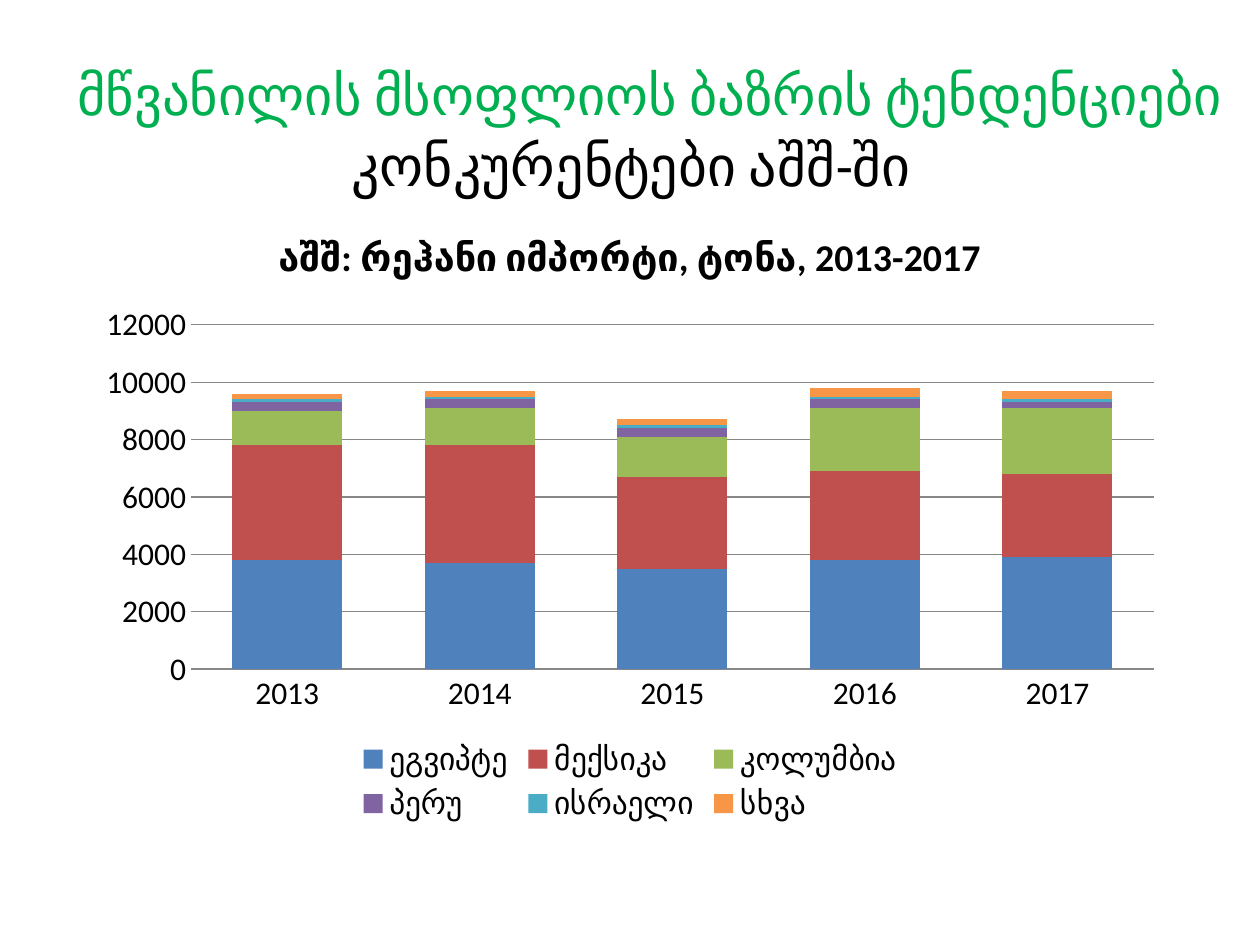
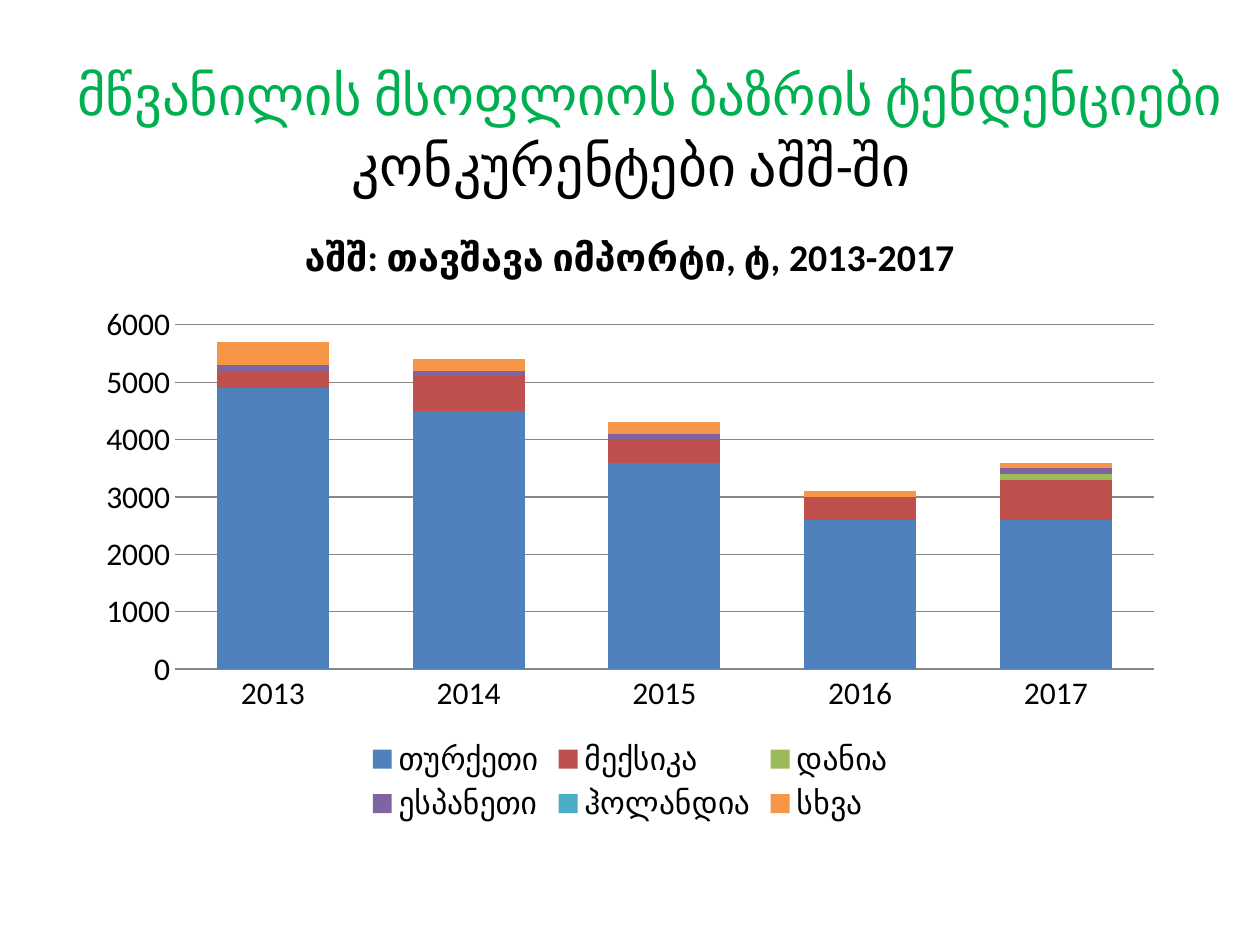
from pptx import Presentation, util as u
from pptx.chart.data import CategoryChartData
from pptx.dml.color import RGBColor
from pptx.enum import chart as charts, text

SCALE = 9144
FONT = "Calibri"
COLORS = {
    "black": "000000", "green": "00B050", "grid": "878787",
    "blue": "4F81BD", "red": "C0504D", "lime": "9BBB59",
    "purple": "8064A2", "aqua": "4BACC6", "orange": "F79646",
}
SERIES_COLORS = ("blue", "red", "lime", "purple", "aqua", "orange")
YEARS = ("2013", "2014", "2015", "2016", "2017")
TITLE = "მწვანილის მსოფლიოს ბაზრის ტენდენციები"
SUBTITLE = "კონკურენტები აშშ-ში"

BASIL = {
    "ეგვიპტე": (3800, 3700, 3500, 3800, 3900),
    "მექსიკა": (4000, 4100, 3200, 3100, 2900),
    "კოლუმბია": (1200, 1300, 1400, 2200, 2300),
    "პერუ": (300, 300, 300, 300, 200),
    "ისრაელი": (100, 100, 100, 100, 100),
    "სხვა": (200, 200, 200, 300, 300),
}
TARRAGON = {
    "თურქეთი": (4900, 4500, 3600, 2600, 2600),
    "მექსიკა": (300, 600, 400, 400, 700),
    "დანია": (0, 0, 0, 0, 100),
    "ესპანეთი": (100, 100, 100, 0, 100),
    "ჰოლანდია": (0, 0, 0, 0, 0),
    "სხვა": (400, 200, 200, 100, 100),
}


class Deck:
    """Builds slides that share one style, with lengths in hundredths of an inch."""

    def __init__(self, width, height):
        self.presentation = Presentation()
        self.presentation.slide_width = width * SCALE
        self.presentation.slide_height = height * SCALE
        self.slide = None

    def color(self, name):
        return RGBColor.from_string(COLORS[name])

    def style(self, font, size, color="black", bold=False):
        font.name, font.size, font.bold = FONT, u.Pt(size), bold
        font.color.rgb = self.color(color)

    def set_text(self, shape, words, size, color, anchor):
        frame = shape.text_frame
        frame.word_wrap = True
        frame.auto_size = text.MSO_AUTO_SIZE.NONE
        frame.vertical_anchor = anchor
        paragraph = frame.paragraphs[0]
        paragraph.text = words
        paragraph.alignment = text.PP_ALIGN.CENTER
        self.style(paragraph.font, size, color)
        return paragraph

    def add_slide(self, title):
        self.slide = self.presentation.slides.add_slide(self.presentation.slide_layouts[5])
        shape = self.slide.shapes.title
        shape.left, shape.top, shape.width, shape.height = (
            length * SCALE for length in (51, 12, 930, 125))
        self.set_text(shape, title, 31.2, "green", text.MSO_ANCHOR.MIDDLE)

    def add_subtitle(self, words):
        box = self.slide.shapes.add_textbox(*(length * SCALE for length in (51, 99, 900, 71)))
        paragraph = self.set_text(box, words, 32, "black", text.MSO_ANCHOR.TOP)
        paragraph.space_before = u.Pt(6.4)

    def add_chart(self, title, imports, maximum, step):
        data = CategoryChartData()
        data.categories = YEARS
        for country, tonnes in imports.items():
            data.add_series(country, tonnes)
        chart = self.slide.shapes.add_chart(
            charts.XL_CHART_TYPE.COLUMN_STACKED,
            *(length * SCALE for length in (67, 162, 866, 496)), data).chart
        self.style(chart.font, 18)
        chart.has_title = True
        heading = chart.chart_title
        heading.include_in_layout = False
        heading.text_frame.text = title
        self.style(heading.text_frame.paragraphs[0].font, 21.6, bold=True)
        chart.has_legend = True
        chart.legend.position = charts.XL_LEGEND_POSITION.BOTTOM
        chart.legend.include_in_layout = False
        self.style(chart.legend.font, 18)
        self.style_axes(chart, maximum, step)
        plot = chart.plots[0]
        plot.gap_width, plot.overlap, plot.vary_by_categories = 75, 100, False
        for series, name in zip(plot.series, SERIES_COLORS):
            series.format.fill.solid()
            series.format.fill.fore_color.rgb = self.color(name)

    def style_axes(self, chart, maximum, step):
        values, years = chart.value_axis, chart.category_axis
        for axis in (values, years):
            axis.major_tick_mark = axis.minor_tick_mark = charts.XL_TICK_MARK.NONE
            self.style(axis.tick_labels.font, 18)
        values.minimum_scale, values.maximum_scale, values.major_unit = 0, maximum, step
        values.format.line.fill.background()
        values.has_major_gridlines = True
        for line in (values.major_gridlines.format.line, years.format.line):
            line.color.rgb = self.color("grid")
            line.width = u.Pt(0.75)

    def save(self):
        self.presentation.save("out.pptx")


def main():
    deck = Deck(1000, 750)
    for heading, imports, maximum, step in (
        ("აშშ: რეჰანი იმპორტი, ტონა, 2013-2017", BASIL, 12000, 2000),
        ("აშშ: თავშავა იმპორტი, ტ, 2013-2017", TARRAGON, 6000, 1000),
    ):
        deck.add_slide(TITLE)
        deck.add_chart(heading, imports, maximum, step)
        deck.add_subtitle(SUBTITLE)
    deck.save()


if __name__ == "__main__":
    main()
